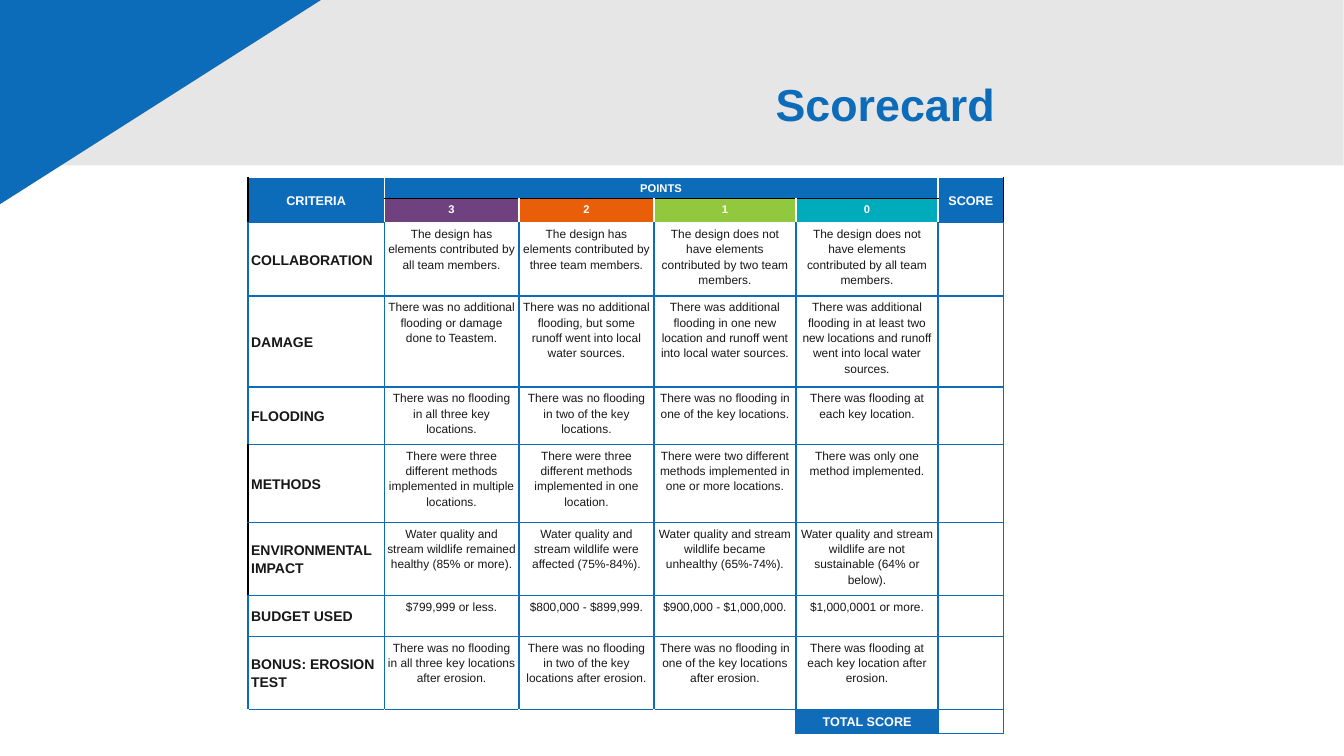
import lxml.etree
import pptx
import pptx.dml.color
import pptx.enum.shapes
import pptx.enum.text
import pptx.oxml.ns
import pptx.util

Cm = pptx.util.Cm
Pt = pptx.util.Pt
ALIGN = pptx.enum.text.PP_ALIGN
ANCHOR = pptx.enum.text.MSO_ANCHOR
SHAPE = pptx.enum.shapes.MSO_SHAPE

FONT = "Arial"
BLUE, WHITE, BLACK, INK = "0D6CB9", "FFFFFF", "000000", "181717"
COLUMN_WIDTHS = [3.43, 3.4, 3.4, 3.58, 3.58, 1.65]
ROW_HEIGHTS = [0.53, 0.61, 1.85, 2.29, 1.45, 1.96, 1.85, 1.02, 1.85, 0.61]
POINT_FILLS = {"3": "70417F", "2": "E95E09", "1": "92C83E", "0": "00ACBB"}
CRITERIA = [
    ("COLLABORATION",
     "The design has elements contributed by all team members.",
     "The design has elements contributed by three team members.",
     "The design does not have elements contributed by two team members.",
     "The design does not have elements contributed by all team members."),
    ("DAMAGE",
     "There was no additional flooding or damage done to Teastem.",
     "There was no additional flooding, but some runoff went into local water sources.",
     "There was additional flooding in one new location and runoff went into local water sources.",
     "There was additional flooding in at least two new locations and runoff went into local "
     "water sources."),
    ("FLOODING",
     "There was no flooding in all three key locations.",
     "There was no flooding in two of the key locations.",
     "There was no flooding in one of the key locations.",
     "There was flooding at each key location."),
    ("METHODS",
     "There were three different methods implemented in multiple locations.",
     "There were three different methods implemented in one location.",
     "There were two different methods implemented in one or more locations.",
     "There was only one method implemented."),
    ("ENVIRONMENTAL IMPACT",
     "Water quality and stream wildlife remained healthy (85% or more).",
     "Water quality and stream wildlife were affected (75%-84%).",
     "Water quality and stream wildlife became unhealthy (65%-74%).",
     "Water quality and stream wildlife are not sustainable (64% or below)."),
    ("BUDGET USED",
     "$799,999 or less.",
     "$800,000 - $899,999.",
     "$900,000 - $1,000,000.",
     "$1,000,0001 or more."),
    ("BONUS: EROSION TEST",
     "There was no flooding in all three key locations after erosion.",
     "There was no flooding in two of the key locations after erosion.",
     "There was no flooding in one of the key locations after erosion.",
     "There was flooding at each key location after erosion."),
]


def rgb(value):
    return pptx.dml.color.RGBColor.from_string(value)


def add_run(para, text, size, color, bold):
    span = para.add_run()
    span.text = text
    span.font.name = FONT
    span.font.size = Pt(size)
    span.font.bold = bold
    span.font.color.rgb = rgb(color)


def add_panel(page, kind, left, top, width, height, color):
    panel = page.shapes.add_shape(kind, Cm(left), Cm(top), Cm(width), Cm(height))
    panel.shadow.inherit = False
    panel.fill.solid()
    panel.fill.fore_color.rgb = rgb(color)
    panel.line.fill.background()
    return panel


def set_title(page, text):
    """Format the title placeholder and bring it in front of the panels."""
    title = page.shapes.title
    title.left, title.top, title.width, title.height = Cm(0.69), Cm(0.86), Cm(24.64), Cm(3.68)
    title.text_frame.vertical_anchor = ANCHOR.MIDDLE
    para = title.text_frame.paragraphs[0]
    para.alignment = ALIGN.RIGHT
    para.line_spacing = 0.9
    add_run(para, text, 32, BLUE, True)
    page.shapes.element.append(title.element)


def edge_colors(row, column):
    """Return the left, right, top and bottom border colours of a cell."""
    last_row, last_column = len(ROW_HEIGHTS) - 1, len(COLUMN_WIDTHS) - 1
    if row < 2:
        if 0 < column < last_column:
            return (WHITE, WHITE) + ((WHITE, BLACK) if row == 0 else (BLACK, WHITE))
        left, right = (BLACK, WHITE) if column == 0 else (WHITE, BLACK)
        return left, right, WHITE, BLUE
    if row == last_row and column < 4:
        return WHITE, BLUE if column == 3 else WHITE, BLUE, WHITE
    left = BLACK if column == 0 and row in (5, 6) else BLUE
    top = WHITE if row == 2 and 0 < column < last_column else BLUE
    return left, BLUE, top, BLUE


def set_borders(cell, colors):
    properties = cell._tc.get_or_add_tcPr()
    for side, color in zip("LRTB", colors):
        line = lxml.etree.SubElement(properties, pptx.oxml.ns.qn(f"a:ln{side}"), w=str(Pt(1)))
        fill = lxml.etree.SubElement(line, pptx.oxml.ns.qn("a:solidFill"))
        lxml.etree.SubElement(fill, pptx.oxml.ns.qn("a:srgbClr"), val=color)


def format_cell(cell, colors):
    set_borders(cell, colors)
    cell.fill.background()
    cell.margin_left = cell.margin_right = cell.margin_top = cell.margin_bottom = Cm(0.08)
    end = cell.text_frame.paragraphs[0]._p.get_or_add_endParaRPr()
    end.set("sz", "800")


def fill_cell(cell, text, size, color=WHITE, bold=True, fill=None,
              align=ALIGN.CENTER, anchor=ANCHOR.TOP):
    if fill:
        cell.fill.solid()
        cell.fill.fore_color.rgb = rgb(fill)
    cell.vertical_anchor = anchor
    para = cell.text_frame.paragraphs[0]
    para.alignment = align
    para.line_spacing = 1.15
    add_run(para, text, size, color, bold)


def add_grid(page):
    frame = page.shapes.add_table(len(ROW_HEIGHTS), len(COLUMN_WIDTHS), Cm(6.25), Cm(4.47),
                                  Cm(sum(COLUMN_WIDTHS)), Cm(sum(ROW_HEIGHTS)))
    table = frame.table
    table.first_row = table.horz_banding = False
    for column, width in zip(table.columns, COLUMN_WIDTHS):
        column.width = Cm(width)
    for row, height in zip(table.rows, ROW_HEIGHTS):
        row.height = Cm(height)
    for row in range(len(ROW_HEIGHTS)):
        for column in range(len(COLUMN_WIDTHS)):
            format_cell(table.cell(row, column), edge_colors(row, column))
    return table


def fill_header(table):
    for column, text in ((0, "CRITERIA"), (5, "SCORE")):
        table.cell(0, column).merge(table.cell(1, column))
        fill_cell(table.cell(0, column), text, 9, fill=BLUE, anchor=ANCHOR.MIDDLE)
    table.cell(0, 1).merge(table.cell(0, 4))
    fill_cell(table.cell(0, 1), "POINTS", 8, fill=BLUE)
    for column, (points, color) in enumerate(POINT_FILLS.items(), 1):
        fill_cell(table.cell(1, column), points, 8, fill=color)


def fill_criteria(table):
    for row, (name, *levels) in enumerate(CRITERIA, 2):
        fill_cell(table.cell(row, 0), name, 10, INK, align=ALIGN.LEFT, anchor=ANCHOR.MIDDLE)
        for column, level in enumerate(levels, 1):
            fill_cell(table.cell(row, column), level, 8.5, INK, bold=False)


def main():
    deck = pptx.Presentation()
    deck.slide_width, deck.slide_height = Cm(33.87), Cm(19.05)
    page = deck.slides.add_slide(deck.slide_layouts[5])
    add_panel(page, SHAPE.RECTANGLE, -0.66, -0.48, 34.52, 4.65, "E7E6E6")
    corner = add_panel(page, SHAPE.RIGHT_TRIANGLE, -6.53, -4.37, 21.49, 13.67, BLUE)
    corner.rotation = 180
    corner.element.spPr.xfrm.set("flipH", "1")
    set_title(page, "Scorecard")
    table = add_grid(page)
    fill_header(table)
    fill_criteria(table)
    fill_cell(table.cell(len(ROW_HEIGHTS) - 1, 4), "TOTAL SCORE", 9, fill="106BB9")
    deck.save("out.pptx")


if __name__ == "__main__":
    main()
